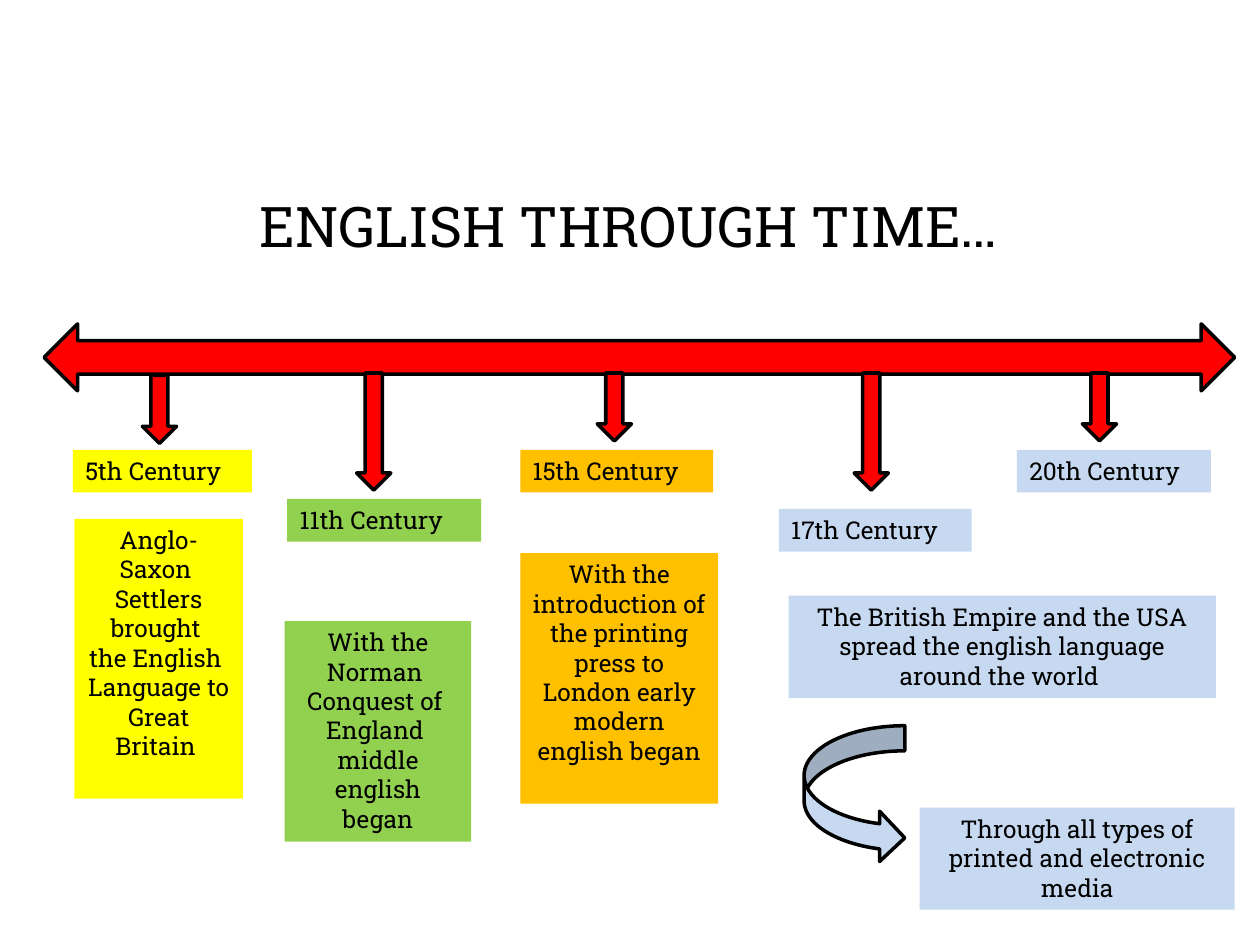
from pptx import Presentation
from pptx import util as u
from pptx.dml.color import RGBColor
from pptx.enum import shapes, text

BLACK = RGBColor(0x00, 0x00, 0x00)
RED = RGBColor(0xFF, 0x00, 0x00)
YELLOW = RGBColor(0xFF, 0xFF, 0x00)
GREEN = RGBColor(0x92, 0xD0, 0x50)
ORANGE = RGBColor(0xFF, 0xC0, 0x00)
BLUE = RGBColor(0xC6, 0xD9, 0xF1)

ARROW_WIDTH = 0.69
DATE_HEIGHT = 0.86

ERAS = [
    ("5th Century", YELLOW, (1.47, 9.07, 3.61), (2.87, 7.57, 1.37)),
    ("11th Century", GREEN, (5.79, 10.06, 3.91), (7.19, 7.52, 2.36)),
    ("15th Century", ORANGE, (10.49, 9.07, 3.89), (12.04, 7.52, 1.37)),
    ("17th Century", BLUE, (15.7, 10.26, 3.89), (17.22, 7.52, 2.36)),
    ("20th Century", BLUE, (20.5, 9.07, 3.91), (21.82, 7.52, 1.37)),
]

EVENTS = [
    (YELLOW, (1.5, 10.46, 3.4, 5.64),
     ["Anglo-Saxon ", "Settlers brought ", "the English ", "Language to ", "Great Britain "]),
    (GREEN, (5.74, 12.52, 3.76, 4.45),
     ["With the Norman ", "Conquest of ", "England ", "middle english began"]),
    (ORANGE, (10.49, 11.15, 3.99, 5.05),
     ["With the introduction of the printing press to London early modern english began"]),
    (BLUE, (15.9, 12.01, 8.61, 2.06),
     ["The British Empire and the USA spread the english language around the world "]),
    (BLUE, (18.54, 16.28, 6.35, 2.06),
     ["Through all types of printed and electronic media"]),
]


class Timeline:
    font = "Roboto Slab"
    body_size = 14
    title_size = 32
    line_width = 2

    def __init__(self, prs):
        self.s = prs.slides.add_slide(prs.slide_layouts[5])

    def set_text(self, tf, lines, size, align):
        tf.word_wrap = True
        tf.auto_size = text.MSO_AUTO_SIZE.NONE
        tf.vertical_anchor = text.MSO_ANCHOR.TOP
        for i, line in enumerate(lines):
            p = tf.paragraphs[0] if i == 0 else tf.add_paragraph()
            p.text = line
            p.alignment = align
            p.font.name = self.font
            p.font.size = u.Pt(size)
            p.font.color.rgb = BLACK

    def title(self, words, box):
        sp = self.s.shapes.title
        sp.left, sp.top, sp.width, sp.height = map(u.Cm, box)
        self.set_text(sp.text_frame, [words], self.title_size, text.PP_ALIGN.LEFT)

    def arrow(self, kind, box, color=RED):
        sp = self.s.shapes.add_shape(kind, *map(u.Cm, box))
        sp.shadow.inherit = False
        sp.fill.solid()
        sp.fill.fore_color.rgb = color
        sp.line.color.rgb = BLACK
        sp.line.width = u.Pt(self.line_width)

    def panel(self, lines, box, color, align=text.PP_ALIGN.CENTER):
        sp = self.s.shapes.add_textbox(*map(u.Cm, box))
        sp.fill.solid()
        sp.fill.fore_color.rgb = color
        self.set_text(sp.text_frame, lines, self.body_size, align)


def main():
    prs = Presentation()
    prs.slide_width, prs.slide_height = u.Cm(25.4), u.Cm(19.05)
    kinds = shapes.MSO_SHAPE

    timeline = Timeline(prs)
    timeline.title("ENGLISH THROUGH TIME…", (4.98, 3.73, 16.84, 1.63))
    timeline.arrow(kinds.LEFT_RIGHT_ARROW, (0.89, 6.53, 24, 1.35))
    for date, color, (left, top, width), (x, y, length) in ERAS:
        timeline.panel([date], (left, top, width, DATE_HEIGHT), color, text.PP_ALIGN.LEFT)
        timeline.arrow(kinds.DOWN_ARROW, (x, y, ARROW_WIDTH, length))
    for color, box, lines in EVENTS:
        timeline.panel(lines, box, color)
    timeline.arrow(kinds.CURVED_RIGHT_ARROW, (16.21, 14.63, 2.03, 2.77), BLUE)

    prs.save("out.pptx")


if __name__ == "__main__":
    main()
